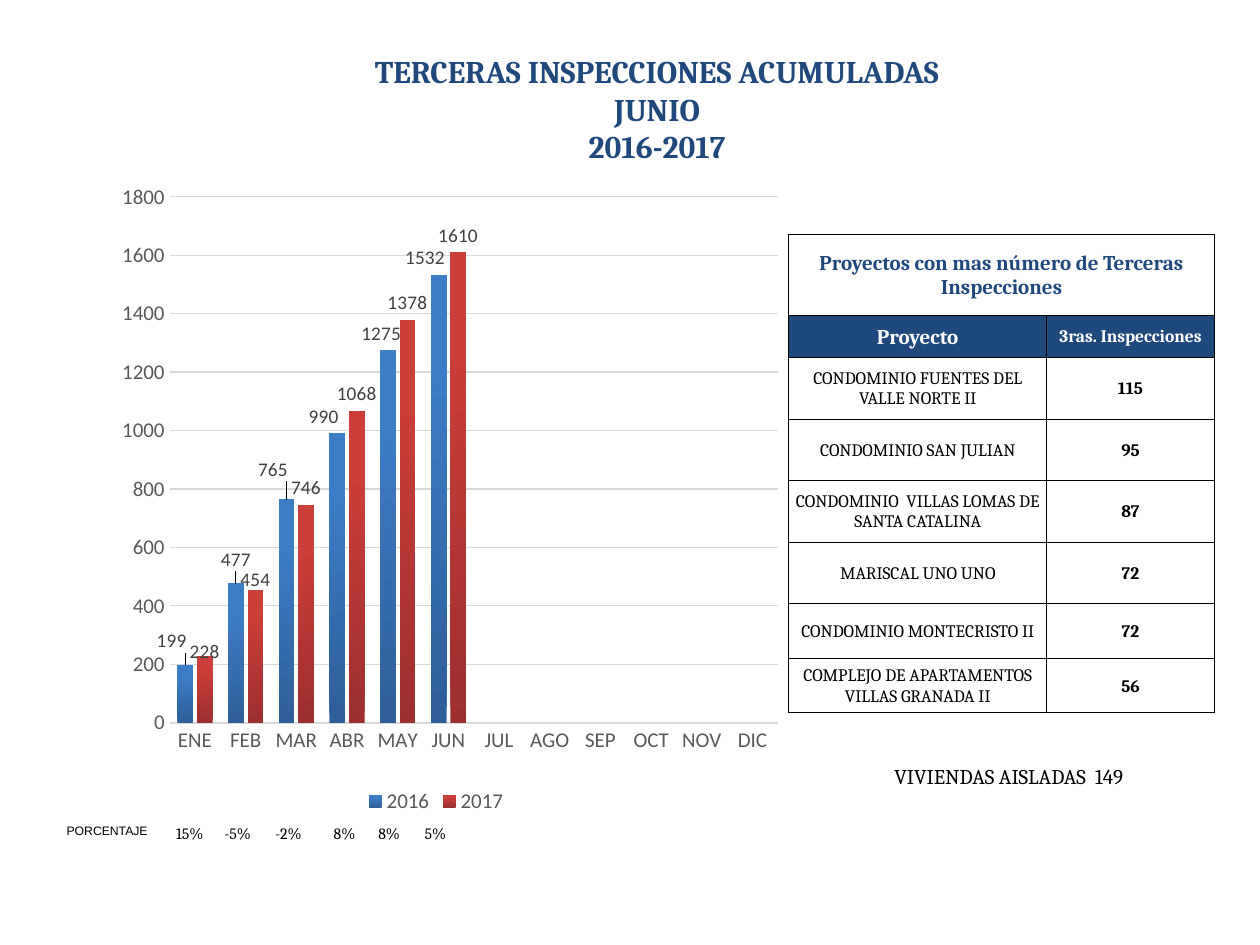
from lxml.etree import SubElement
from pptx import Presentation
from pptx.chart.data import CategoryChartData
from pptx.dml.color import RGBColor
from pptx.enum.chart import XL_CHART_TYPE, XL_LABEL_POSITION, XL_LEGEND_POSITION, XL_TICK_MARK
from pptx.enum.text import MSO_ANCHOR, MSO_AUTO_SIZE, PP_ALIGN
from pptx.oxml.ns import qn
from pptx.util import Pt

NAVY = RGBColor(0x1F, 0x49, 0x7D)
BLACK = RGBColor(0, 0, 0)
WHITE = RGBColor(255, 255, 255)
GRAY = RGBColor(0x59, 0x59, 0x59)
DARK = RGBColor(0x40, 0x40, 0x40)
PALE = RGBColor(0xD9, 0xD9, 0xD9)
BLUES = RGBColor(0x2F, 0x5F, 0x99), RGBColor(0x3D, 0x7C, 0xC7)
REDS = RGBColor(0x9C, 0x2F, 0x2D), RGBColor(0xCB, 0x3E, 0x3A)

MONTHS = ["ENE", "FEB", "MAR", "ABR", "MAY", "JUN",
          "JUL", "AGO", "SEP", "OCT", "NOV", "DIC"]
SERIES = [
    ("2016", [199, 477, 765, 990, 1275, 1532], BLUES,
     [(-0.02, -0.01), (0, -0.01), (-0.02, -0.02), (-0.02, 0), (-0.01, 0), (-0.02, 0)]),
    ("2017", [228, 454, 746, 1068, 1378, 1610], REDS, [(0, 0.02), (0, 0.01)]),
]
RATES = ["15%", "-5%", "-2%", "8%", "8%", "5%"]
STOPS = [27.5, 56.5, 90, 115.5, 142]
ROWS = [
    ("Proyectos con mas número de Terceras Inspecciones", ""),
    ("Proyecto", "3ras. Inspecciones"),
    ("CONDOMINIO FUENTES DEL VALLE NORTE II", "115"),
    ("CONDOMINIO SAN JULIAN", "95"),
    ("CONDOMINIO  VILLAS LOMAS DE SANTA CATALINA", "87"),
    ("MARISCAL UNO UNO", "72"),
    ("CONDOMINIO MONTECRISTO II", "72"),
    ("COMPLEJO DE APARTAMENTOS VILLAS GRANADA II", "56"),
]
HEIGHTS = [46.4, 24, 35.2, 35.2, 35.2, 35.2, 31.4, 30.8]


def style(font, size, color, name="Cambria", bold=False):
    """Set the look of a font."""
    font.size, font.name, font.bold = Pt(size), name, bold
    font.color.rgb = color


def add_title(slide, x, y, w, h):
    """Place the three-line title."""
    title = slide.shapes.title
    title.left, title.top, title.width, title.height = Pt(x), Pt(y), Pt(w), Pt(h)
    frame = title.text_frame
    frame.text = "TERCERAS INSPECCIONES ACUMULADAS\nJUNIO\n2016-2017"
    frame.vertical_anchor = MSO_ANCHOR.TOP
    frame.auto_size = MSO_AUTO_SIZE.NONE
    for para in frame.paragraphs:
        para.alignment = PP_ALIGN.CENTER
        for run in para.runs:
            style(run.font, 18, NAVY, bold=True)


def add_note(slide, x, y, w, h, text, size, name, stops=()):
    """Add a line of text with optional tab stops."""
    frame = slide.shapes.add_textbox(Pt(x), Pt(y), Pt(w), Pt(h)).text_frame
    frame.word_wrap = True
    para = frame.paragraphs[0]
    para.text = text
    if stops:
        tabs = SubElement(para._p.get_or_add_pPr(), qn("a:tabLst"))
        for stop in stops:
            SubElement(tabs, qn("a:tab"), pos=str(Pt(stop)), algn="l")
    for run in para.runs:
        style(run.font, size, BLACK, name)


def set_layout(node, spot, **values):
    """Give a chart part a manual layout."""
    for old in node.findall(qn("c:layout")):
        node.remove(old)
    layout = SubElement(node, qn("c:layout"))
    node.insert(spot, layout)
    manual = SubElement(layout, qn("c:manualLayout"))
    for key, value in values.items():
        SubElement(manual, qn("c:" + key), val=str(value))


def paint_bars(series, tones, shifts):
    """Shade one series and place its labels."""
    fill = series.format.fill
    fill.gradient()
    fill.gradient_angle = 90
    for stop, tone, place in zip(fill.gradient_stops, tones, (0, 0.8)):
        stop.color.rgb, stop.position = tone, place
    labels = series.data_labels
    labels.show_value = True
    labels.position = XL_LABEL_POSITION.OUTSIDE_END
    style(labels.font, 11, DARK, "Calibri")
    for i, (dx, dy) in enumerate(shifts):
        label = series.points[i].data_label
        label.position = XL_LABEL_POSITION.OUTSIDE_END
        style(label.font, 11, DARK, "Calibri")
        node = series._element.findall(".//" + qn("c:dLbl"))[i]
        set_layout(node, 1, x=dx, y=dy)


def add_bars(slide, x, y, w, h):
    """Add the monthly column chart."""
    data = CategoryChartData()
    data.categories = MONTHS
    for name, values, _, _ in SERIES:
        data.add_series(name, values + [None] * (len(MONTHS) - len(values)))
    chart = slide.shapes.add_chart(XL_CHART_TYPE.COLUMN_CLUSTERED,
                                   Pt(x), Pt(y), Pt(w), Pt(h), data).chart
    style(chart.font, 10, BLACK, "Calibri")
    chart.has_title = False
    chart.has_legend = True
    chart.legend.position = XL_LEGEND_POSITION.BOTTOM
    chart.legend.include_in_layout = False
    style(chart.legend.font, 12, GRAY, "Calibri")
    plot = chart.plots[0]
    plot.gap_width, plot.overlap = 100, -24
    plot.vary_by_categories = False
    for series, (_, _, tones, shifts) in zip(plot.series, SERIES):
        paint_bars(series, tones, shifts)
    months, scale = chart.category_axis, chart.value_axis
    for axis in (months, scale):
        axis.major_tick_mark = axis.minor_tick_mark = XL_TICK_MARK.NONE
        style(axis.tick_labels.font, 12, GRAY, "Calibri")
    months.format.line.color.rgb = PALE
    months.format.line.width = Pt(1)
    scale.minimum_scale, scale.maximum_scale, scale.major_unit = 0, 1800, 200
    scale.format.line.fill.background()
    scale.major_gridlines.format.line.color.rgb = PALE
    scale.major_gridlines.format.line.width = Pt(0.75)
    area = chart._chartSpace.find(".//" + qn("c:plotArea"))
    set_layout(area, 0, layoutTarget="inner", xMode="edge", yMode="edge",
               x=0.11, y=0.03, w=0.89, h=0.82)


def set_edges(cell, widths):
    """Draw the left, right, top and bottom borders of a cell."""
    props = cell._tc.get_or_add_tcPr()
    for side, width in zip("LRTB", widths):
        line = SubElement(props, qn("a:ln" + side), w=str(Pt(width)))
        if width:
            fill = SubElement(line, qn("a:solidFill"))
            SubElement(fill, qn("a:srgbClr"), val=str(BLACK))
        else:
            SubElement(line, qn("a:noFill"))


def set_cell(cell, text, size, color, bold, edges, back=None):
    """Fill and format one table cell."""
    cell.text = text
    cell.vertical_anchor = MSO_ANCHOR.MIDDLE
    cell.margin_left = cell.margin_right = cell.margin_top = Pt(0.7)
    cell.margin_bottom = 0
    para = cell.text_frame.paragraphs[0]
    para.alignment = PP_ALIGN.CENTER
    for run in para.runs:
        style(run.font, size, color, bold=bold)
    set_edges(cell, edges)
    if back is None:
        cell.fill.background()
    else:
        cell.fill.solid()
        cell.fill.fore_color.rgb = back


def add_grid(slide, x, y, widths, heights):
    """Add a plain table."""
    table = slide.shapes.add_table(len(heights), len(widths), Pt(x), Pt(y),
                                   Pt(sum(widths)), Pt(sum(heights))).table
    table.first_row = table.horz_banding = False
    for col, width in zip(table.columns, widths):
        col.width = Pt(width)
    for row, height in zip(table.rows, heights):
        row.height = Pt(height)
    return table


def add_projects(slide, x, y):
    """Add the table of projects with most inspections."""
    table = add_grid(slide, x, y, [147.4, 95.8], HEIGHTS)
    table.cell(0, 0).merge(table.cell(0, 1))
    for r, row in enumerate(ROWS):
        top = 1 if r < 3 else 0.5
        base = 1 if r < 2 or r == len(ROWS) - 1 else 0.5
        for c, text in enumerate(row):
            edges = (0.5, 1, top, base) if c else (1, 0.5, top, base)
            size = 12 if r < 2 and c == 0 else 10
            color = (NAVY, WHITE)[r] if r < 2 else BLACK
            set_cell(table.cell(r, c), text, size, color, r < 2 or c == 1,
                     edges, NAVY if r == 1 else None)


def main():
    """Build and save the slide."""
    deck = Presentation()
    deck.slide_width, deck.slide_height = Pt(720), Pt(540)
    slide = deck.slides.add_slide(deck.slide_layouts[5])
    add_title(slide, 144.7, 26, 461.5, 75)
    homes = add_grid(slide, 502, 427, [149], [34])
    set_cell(homes.cell(0, 0), "VIVIENDAS AISLADAS  149", 12, BLACK, False, (0, 0, 0, 0))
    add_note(slide, 31, 466.6, 62.6, 37.4, "PORCENTAJE", 7, "Arial")
    add_note(slide, 93.6, 467.3, 181.4, 18, "\t".join(RATES), 9, "Cambria", STOPS)
    add_bars(slide, 54, 101.5, 391, 366.5)
    add_projects(slide, 450.7, 134)
    deck.save("out.pptx")


if __name__ == "__main__":
    main()
